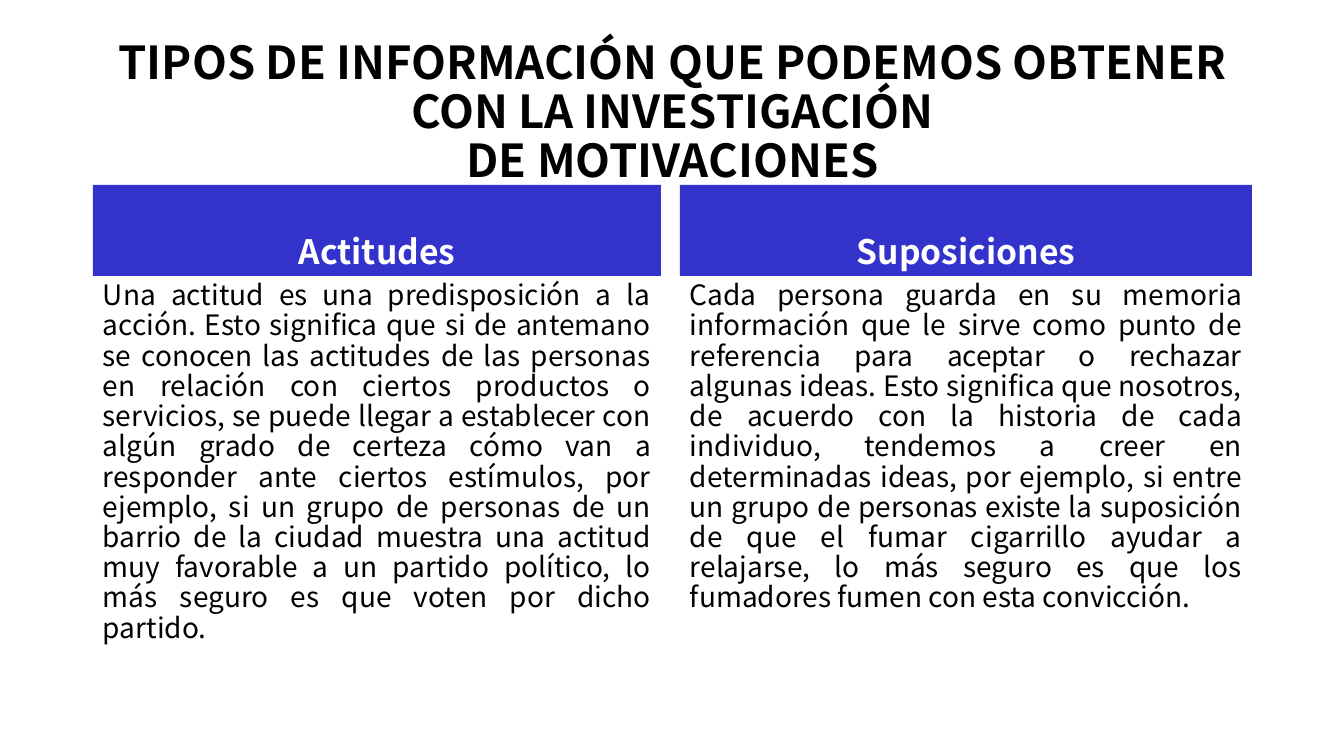
from pptx import Presentation
from pptx import util as u
from pptx.dml.color import RGBColor
from pptx.enum import shapes, text

PX = 9071
FONT = "Noto Sans CJK SC"
BLUE, WHITE, BLACK = "3333CC", "FFFFFF", "000000"
LEADING = 1.08
HEAD_TOP, HEAD_H = 185, 91
BODY_TOP, BODY_H = HEAD_TOP + HEAD_H, 406

TITLE = ("TIPOS DE INFORMACIÓN QUE PODEMOS OBTENER CON LA INVESTIGACIÓN\v"
         "DE MOTIVACIONES")
COLUMNS = [
    (93, 568, "Actitudes",
     "Una actitud es una predisposición a la acción. Esto significa que si de "
     "antemano se conocen las actitudes de las personas en relación con ciertos "
     "productos o servicios, se puede llegar a establecer con algún grado de "
     "certeza cómo van a responder ante ciertos estímulos, por ejemplo, si un "
     "grupo de personas de un barrio de la ciudad muestra una actitud muy "
     "favorable a un partido político, lo más seguro es que voten por dicho "
     "partido."),
    (680, 572, "Suposiciones",
     "Cada persona guarda en su memoria información que le sirve como punto de "
     "referencia para aceptar o rechazar algunas ideas. Esto significa que "
     "nosotros, de acuerdo con la historia de cada individuo, tendemos a creer "
     "en determinadas ideas, por ejemplo, si entre un grupo de personas existe "
     "la suposición de que el fumar cigarrillo ayudar a relajarse, lo más "
     "seguro es que los fumadores fumen con esta convicción."),
]


def px(*values):
    return [u.Emu(v * PX) for v in values]


def color(value):
    return RGBColor.from_string(value)


def write(sp, content, size, fill=BLACK, bold=False,
          align=text.PP_ALIGN.CENTER, anchor=text.MSO_ANCHOR.TOP):
    tf = sp.text_frame
    tf.word_wrap = True
    tf.vertical_anchor = anchor
    p = tf.paragraphs[0]
    p.text = content
    p.alignment = align
    p.line_spacing = u.Pt(size * LEADING)
    for r in p.runs:
        r.font.name = FONT
        r.font.size = u.Pt(size)
        r.font.bold = bold
        r.font.color.rgb = color(fill)


def add_label(s, box, content, size, **fmt):
    write(s.shapes.add_textbox(*px(*box)), content, size, **fmt)


def add_header(s, box, content):
    sp = s.shapes.add_shape(shapes.MSO_SHAPE.RECTANGLE, *px(*box))
    sp.shadow.inherit = False
    sp.fill.solid()
    sp.fill.fore_color.rgb = color(BLUE)
    sp.line.fill.background()
    write(sp, content, 24, fill=WHITE, bold=True,
          anchor=text.MSO_ANCHOR.BOTTOM)


def main():
    prs = Presentation()
    prs.slide_width, prs.slide_height = px(1344, 756)
    s = prs.slides.add_slide(prs.slide_layouts[6])
    add_label(s, (93, 40, 1159, 146), TITLE, 32.4, bold=True,
              anchor=text.MSO_ANCHOR.MIDDLE)
    for left, width, heading, body in COLUMNS:
        add_header(s, (left, HEAD_TOP, width, HEAD_H), heading)
        add_label(s, (left, BODY_TOP, width, BODY_H), body, 20,
                  align=text.PP_ALIGN.JUSTIFY)
    prs.save("out.pptx")


if __name__ == "__main__":
    main()
